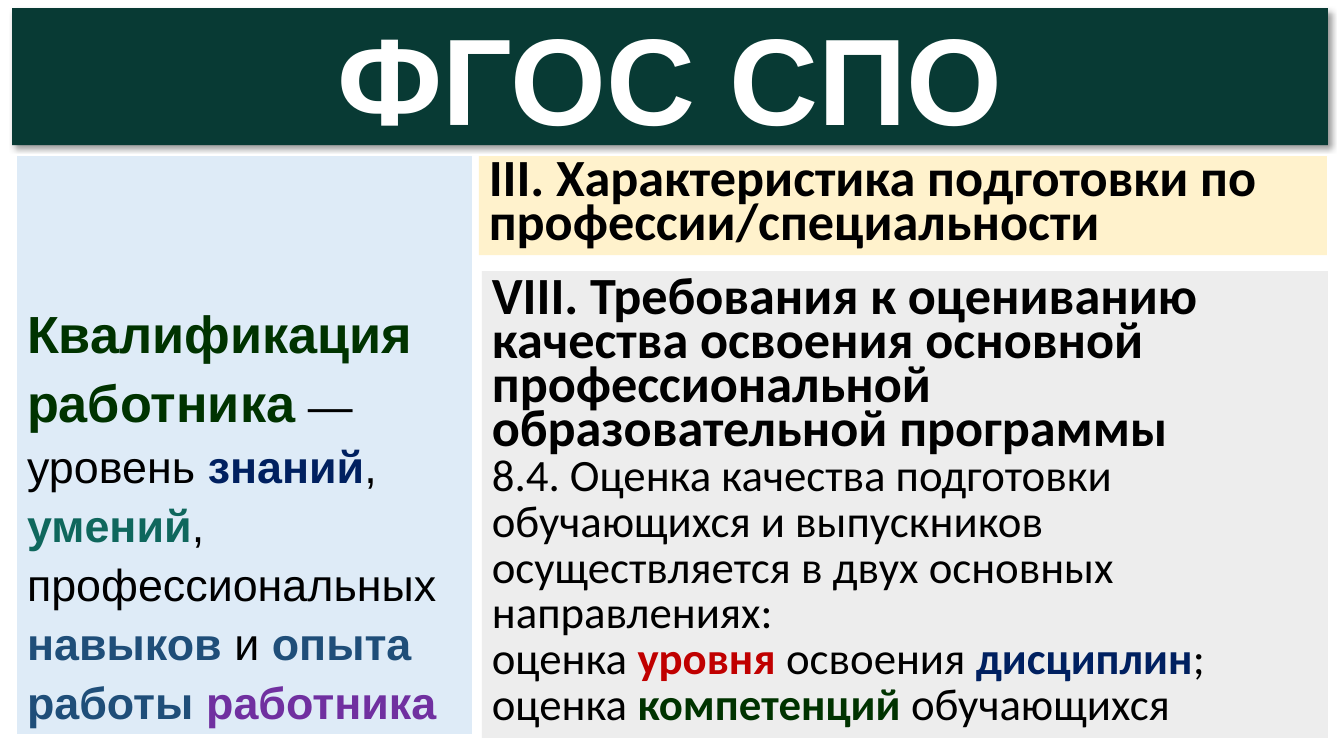
import pptx
import pptx.util
import pptx.dml.color
import pptx.enum.shapes
import pptx.enum.text
import pptx.oxml
import pptx.oxml.ns

WIDE, HIGH = 13.33, 7.5
BLACK, GREEN, NAVY, BLUE = "000000", "003300", "002060", "1F4E79"
BIG, MID = 37.3, 32
ANCHOR = pptx.enum.text.MSO_ANCHOR


def hue(code):
    return pptx.dml.color.RGBColor.from_string(code)


def share(left, top, width, height):
    sides = ((left, WIDE), (top, HIGH), (width, WIDE), (height, HIGH))
    return [pptx.util.Inches(part * full / 100) for part, full in sides]


def paint(shape, code):
    shape.fill.solid()
    shape.fill.fore_color.rgb = hue(code)
    shape.line.fill.background()


def shade(shape):
    tag = pptx.oxml.ns.nsdecls("a")
    shape._element.spPr.append(pptx.oxml.parse_xml(
        f'<a:effectLst {tag}><a:outerShdw blurRad="50800" dist="38100" '
        'dir="2700000" algn="tl" rotWithShape="0"><a:srgbClr val="000000">'
        '<a:alpha val="40000"/></a:srgbClr></a:outerShdw></a:effectLst>'))


def write(para, face, size, gap, runs):
    para.line_spacing = gap
    para.font.name = face
    sizes = {run[3] if len(run) > 3 else size for run in runs}
    if len(sizes) == 1:
        para.font.size = pptx.util.Pt(size)
    for text, code, bold, *own in runs:
        run = para.add_run()
        run.text = text
        run.font.color.rgb = hue(code)
        run.font.bold = bold
        if len(sizes) > 1:
            run.font.size = pptx.util.Pt(own[0] if own else size)


def panel(slide, box, code, anchor, face, paras):
    shape = slide.shapes.add_shape(
        pptx.enum.shapes.MSO_SHAPE.RECTANGLE, *share(*box))
    shape.shadow.inherit = False
    paint(shape, code)
    frame = shape.text_frame
    frame.word_wrap = True
    frame.vertical_anchor = anchor
    for spot, (size, gap, runs) in enumerate(paras):
        para = frame.add_paragraph() if spot else frame.paragraphs[0]
        para.alignment = pptx.enum.text.PP_ALIGN.LEFT
        write(para, face, size, gap, runs)


def banner(slide, box):
    title = slide.shapes.title
    title.left, title.top, title.width, title.height = share(*box)
    paint(title, "083A34")
    shade(title)
    frame = title.text_frame
    frame.auto_size = pptx.enum.text.MSO_AUTO_SIZE.NONE
    frame.vertical_anchor = ANCHOR.MIDDLE
    para = frame.paragraphs[0]
    para.alignment = pptx.enum.text.PP_ALIGN.CENTER
    write(para, "Arial", 88, 1, [("ФГОС СПО", "FFFFFF", True)])


def skill(slide, box):
    runs = [
        ("Квалификация", GREEN, True, BIG),
        (" ", BLACK, False),
        ("работника", GREEN, True, BIG),
        (" — уровень ", BLACK, False),
        ("знаний", NAVY, True),
        (", ", BLACK, False),
        ("умений", "0F675D", True),
        (", профессиональных ", BLACK, False),
        ("навыков", BLUE, True),
        (" и ", BLACK, False),
        ("опыта работы ", BLUE, True),
        ("работника", "7030A0", True),
    ]
    panel(slide, box, "DEEBF7", ANCHOR.BOTTOM, "Arial", [(MID, 1.1, runs)])


def profile(slide, box):
    text = "III. Характеристика подготовки по профессии/специальности"
    panel(slide, box, "FFF2CC", ANCHOR.TOP, "Calibri",
          [(BIG, 0.7, [(text, BLACK, True)])])


def demands(slide, box):
    head = ("VIII. Требования к оцениванию качества освоения основной "
            "профессиональной образовательной программы")
    lead = ("8.4. Оценка качества подготовки обучающихся и выпускников "
            "осуществляется в двух основных направлениях:")
    levels = [
        ("оценка ", BLACK, False),
        ("уровня", "C00000", True),
        (" освоения ", BLACK, False),
        ("дисциплин", NAVY, True),
        (";", BLACK, False),
    ]
    powers = [
        ("оценка ", BLACK, False),
        ("компетенций", GREEN, True),
        (" обучающихся", BLACK, False),
    ]
    panel(slide, box, "EDEDED", ANCHOR.MIDDLE, "Calibri", [
        (BIG, 0.7, [(head, BLACK, True)]),
        (MID, 0.85, [(lead, BLACK, False)]),
        (MID, 0.85, levels),
        (MID, 0.85, powers),
    ])


def main():
    deck = pptx.Presentation()
    deck.slide_width = pptx.util.Inches(WIDE)
    deck.slide_height = pptx.util.Inches(HIGH)
    slide = deck.slides.add_slide(deck.slide_layouts[5])
    banner(slide, (0.9, 1.07, 97.9, 18.13))
    demands(slide, (35.86, 35.87, 62.94, 61.73))
    skill(slide, (1.28, 20.67, 33.83, 76.4))
    profile(slide, (35.63, 20.67, 63.09, 13.07))
    deck.save("out.pptx")


if __name__ == "__main__":
    main()
